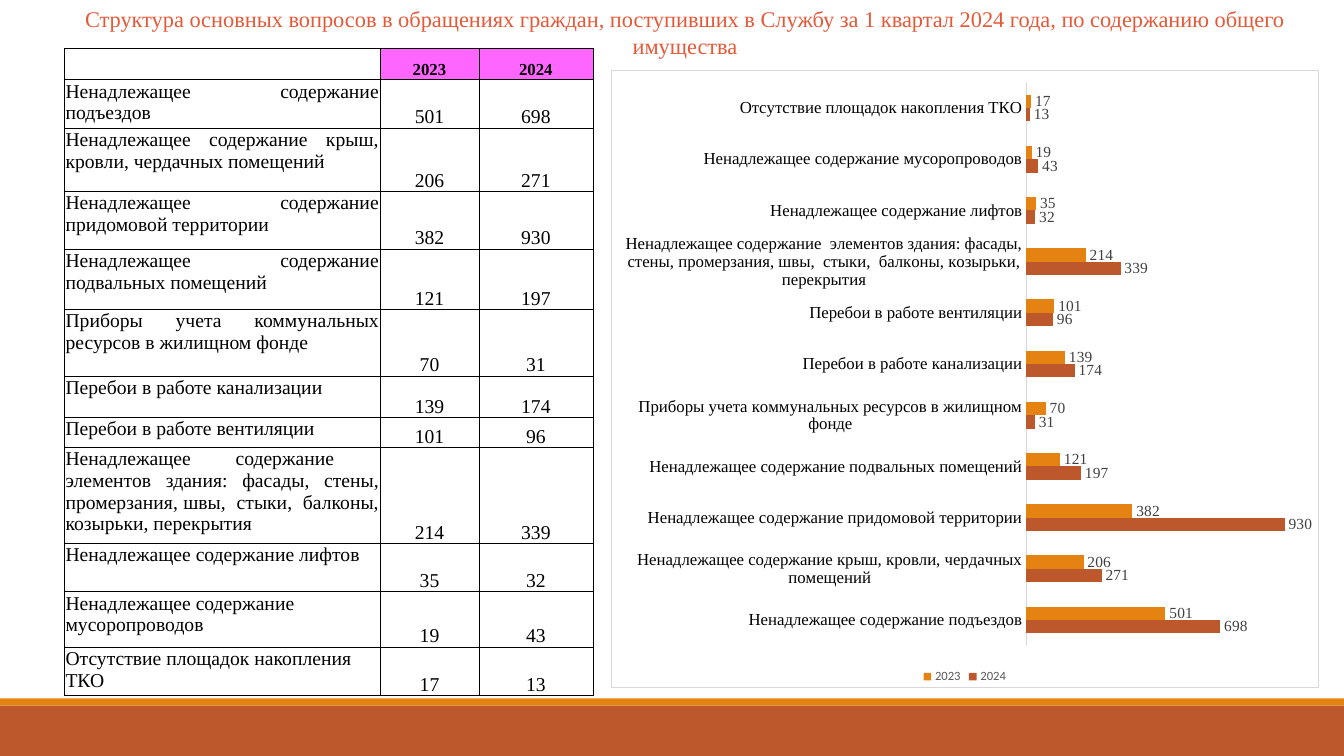
"""Builds the slide on citizens' appeals about common property: a table and a bar chart."""
import dataclasses

import lxml.etree
import pptx
import pptx.chart.data
import pptx.dml.color
import pptx.enum.chart
import pptx.enum.shapes
import pptx.enum.text
import pptx.oxml
import pptx.oxml.ns
import pptx.util

Inches = pptx.util.Inches
Pt = pptx.util.Pt
ALIGN = pptx.enum.text.PP_ALIGN
ANCHOR = pptx.enum.text.MSO_ANCHOR


@dataclasses.dataclass(frozen=True)
class Theme:
    serif: str = "Times New Roman"
    sans: str = "Calibri"
    black: str = "000000"
    white: str = "FFFFFF"
    title: str = "E65938"
    header: str = "FF66FF"
    orange: str = "E48312"
    rust: str = "BD582C"
    grid: str = "D9D9D9"
    label: str = "404040"
    legend: str = "595959"
    title_size: float = 16
    body_size: float = 14
    header_size: float = 12
    label_size: float = 11
    chart_size: float = 10
    legend_size: float = 9


THEME = Theme()

TITLE = ("Структура основных вопросов в обращениях граждан, поступивших в Службу "
         "за 1 квартал 2024 года, по содержанию общего имущества")
YEARS = ("2023", "2024")
APPEALS = [
    ("Ненадлежащее содержание подъездов", 501, 698),
    ("Ненадлежащее содержание крыш, кровли, чердачных помещений", 206, 271),
    ("Ненадлежащее содержание придомовой территории", 382, 930),
    ("Ненадлежащее содержание подвальных помещений", 121, 197),
    ("Приборы учета коммунальных ресурсов в жилищном фонде", 70, 31),
    ("Перебои в работе канализации", 139, 174),
    ("Перебои в работе вентиляции", 101, 96),
    ("Ненадлежащее содержание  элементов здания: фасады, стены, промерзания, "
     "швы,  стыки,  балконы, козырьки, перекрытия", 214, 339),
    ("Ненадлежащее содержание лифтов", 35, 32),
    ("Ненадлежащее содержание мусоропроводов", 19, 43),
    ("Отсутствие площадок накопления ТКО", 17, 13),
]
LEFT_ALIGNED_ROWS = 2
COLUMN_WIDTHS = (3.13, 0.98, 1.13)
ROW_HEIGHTS = (0.21, 0.48, 0.63, 0.57, 0.6, 0.66, 0.41, 0.3, 0.95, 0.48, 0.55, 0.48)


def rgb(color):
    return pptx.dml.color.RGBColor.from_string(color)


def set_attrs(obj, **values):
    for name, value in values.items():
        setattr(obj, name, value)


def set_font(font, size, color, name=THEME.serif, bold=False):
    set_attrs(font, size=Pt(size), name=name, bold=bold)
    font.color.rgb = rgb(color)


def write(tf, text, size, color, align, bold=False):
    p = tf.paragraphs[0]
    p.alignment = align
    r = p.add_run()
    r.text = text
    set_font(r.font, size, color, bold=bold)


def add_band(s, top, height, color):
    sp = s.shapes.add_shape(pptx.enum.shapes.MSO_SHAPE.RECTANGLE,
                            0, Inches(top), Inches(13.33), Inches(height))
    sp.shadow.inherit = False
    sp.fill.solid()
    sp.fill.fore_color.rgb = rgb(color)
    sp.line.fill.background()


def add_title(s):
    sp = s.shapes.add_textbox(Inches(0.51), 0, Inches(12.57), Inches(0.64))
    sp.text_frame.word_wrap = True
    write(sp.text_frame, TITLE, THEME.title_size, THEME.title, ALIGN.CENTER)


def add_borders(cell):
    tcPr = cell._tc.get_or_add_tcPr()
    for side in ("lnL", "lnR", "lnT", "lnB"):
        ln = lxml.etree.SubElement(tcPr, pptx.oxml.ns.qn("a:" + side), w=str(Pt(0.5)))
        fill = lxml.etree.SubElement(ln, pptx.oxml.ns.qn("a:solidFill"))
        lxml.etree.SubElement(fill, pptx.oxml.ns.qn("a:srgbClr"), val=THEME.black)


def fill_cell(cell, text, align, anchor, size, bold=False, fill=None):
    edge = Inches(0.01)
    set_attrs(cell, margin_left=edge, margin_right=edge, margin_top=edge,
              margin_bottom=0, vertical_anchor=anchor)
    add_borders(cell)
    if fill:
        cell.fill.solid()
        cell.fill.fore_color.rgb = rgb(fill)
    else:
        cell.fill.background()
    write(cell.text_frame, text, size, THEME.black, align, bold)


def add_appeals_table(s):
    table = s.shapes.add_table(len(ROW_HEIGHTS), len(COLUMN_WIDTHS), Inches(0.64), Inches(0.48),
                               Inches(sum(COLUMN_WIDTHS)), Inches(sum(ROW_HEIGHTS))).table
    set_attrs(table, first_row=False, horz_banding=False)
    for column, width in zip(table.columns, COLUMN_WIDTHS):
        column.width = Inches(width)
    for row, height in zip(table.rows, ROW_HEIGHTS):
        row.height = Inches(height)
    for i, text in enumerate(("",) + YEARS):
        fill_cell(table.cell(0, i), text, ALIGN.CENTER, ANCHOR.BOTTOM, THEME.header_size,
                  bold=True, fill=THEME.header if text else THEME.white)
    for i, (topic, *counts) in enumerate(APPEALS, 1):
        align = ALIGN.LEFT if i > len(APPEALS) - LEFT_ALIGNED_ROWS else ALIGN.JUSTIFY
        fill_cell(table.cell(i, 0), topic, align, ANCHOR.TOP, THEME.body_size)
        for j, count in enumerate(counts, 1):
            fill_cell(table.cell(i, j), str(count), ALIGN.CENTER, ANCHOR.BOTTOM, THEME.body_size)


def frame_chart(chart):
    spPr = pptx.oxml.parse_xml(
        f'<c:spPr {pptx.oxml.ns.nsdecls("c", "a")}>'
        f'<a:solidFill><a:srgbClr val="{THEME.white}"/></a:solidFill>'
        f'<a:ln w="{Pt(0.75)}"><a:solidFill><a:srgbClr val="{THEME.grid}"/></a:solidFill></a:ln>'
        '</c:spPr>')
    chart._chartSpace.find(pptx.oxml.ns.qn("c:chart")).addnext(spPr)


def style_series(series, color):
    series.format.fill.solid()
    series.format.fill.fore_color.rgb = rgb(color)
    labels = series.data_labels
    set_attrs(labels, show_value=True,
              position=pptx.enum.chart.XL_LABEL_POSITION.OUTSIDE_END)
    set_font(labels.font, THEME.label_size, THEME.label)


def add_appeals_chart(s):
    topics, *counts = zip(*APPEALS)
    data = pptx.chart.data.CategoryChartData()
    data.categories = topics
    for year, values in reversed(list(zip(YEARS, counts))):
        data.add_series(year, values)
    chart = s.shapes.add_chart(pptx.enum.chart.XL_CHART_TYPE.BAR_CLUSTERED, Inches(6.06),
                               Inches(0.69), Inches(7.02), Inches(6.14), data).chart
    set_attrs(chart, has_title=False, has_legend=True)
    set_font(chart.font, THEME.chart_size, THEME.black, THEME.sans)
    frame_chart(chart)
    set_attrs(chart.legend, position=pptx.enum.chart.XL_LEGEND_POSITION.BOTTOM,
              include_in_layout=False)
    set_font(chart.legend.font, THEME.legend_size, THEME.legend, THEME.sans)
    plot = chart.plots[0]
    set_attrs(plot, gap_width=182, vary_by_categories=False)
    for series, color in zip(plot.series, (THEME.rust, THEME.orange)):
        style_series(series, color)
    axis = chart.category_axis
    axis.major_tick_mark = pptx.enum.chart.XL_TICK_MARK.NONE
    axis.format.line.width = Pt(0.75)
    axis.format.line.color.rgb = rgb(THEME.grid)
    set_font(axis.tick_labels.font, THEME.header_size, THEME.black)
    set_attrs(chart.value_axis, visible=False, has_major_gridlines=False)


def main():
    prs = pptx.Presentation()
    set_attrs(prs, slide_width=Inches(13.33), slide_height=Inches(7.5))
    s = prs.slides.add_slide(prs.slide_layouts[6])
    add_band(s, 7, 0.5, THEME.rust)
    add_band(s, 6.93, 0.07, THEME.orange)
    add_title(s)
    add_appeals_chart(s)
    add_appeals_table(s)
    prs.save("out.pptx")


if __name__ == "__main__":
    main()
